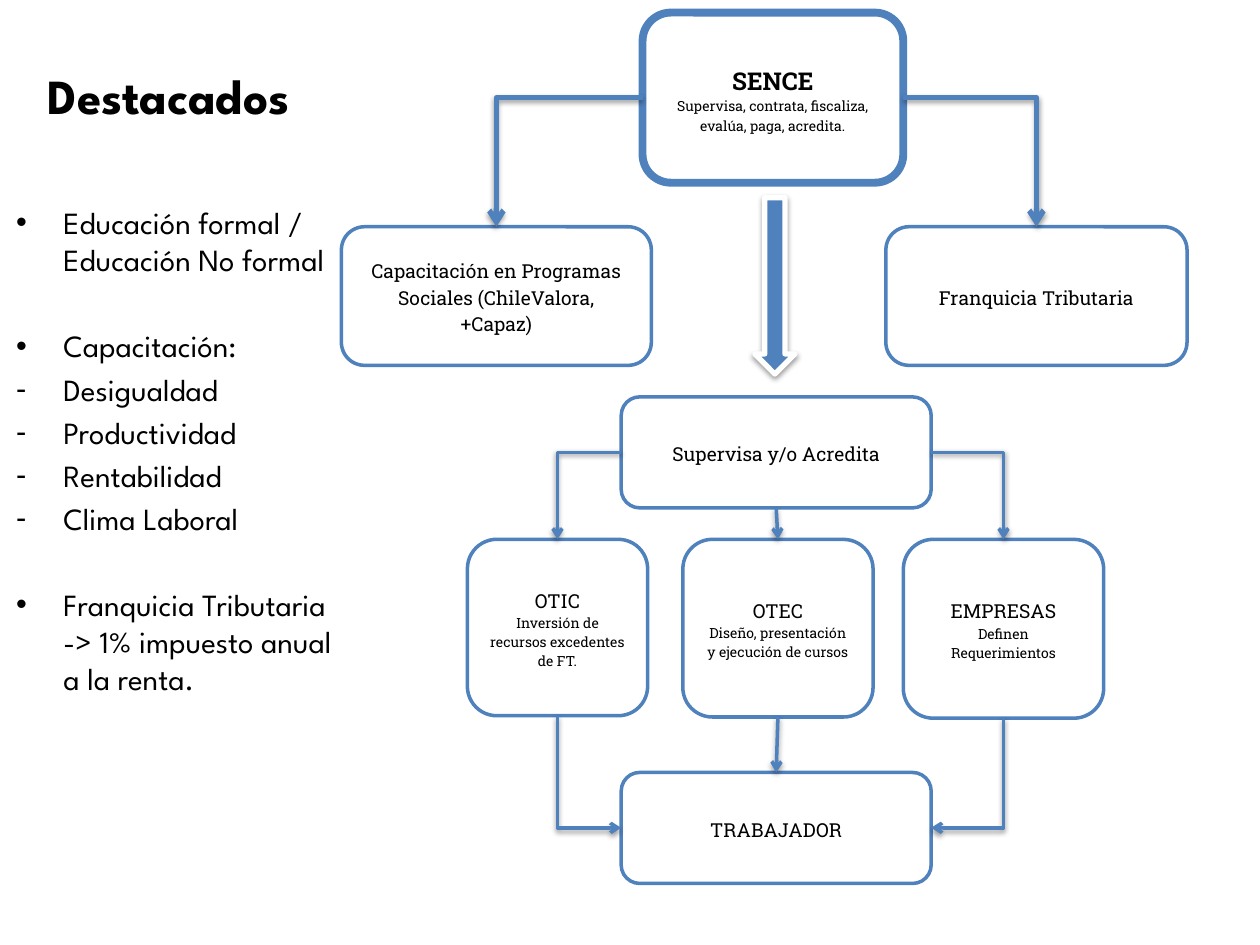
from dataclasses import dataclass

from lxml import etree
from pptx import Presentation
from pptx.dml.color import RGBColor
from pptx.enum.shapes import MSO_CONNECTOR, MSO_SHAPE
from pptx.enum.text import MSO_ANCHOR, PP_ALIGN
from pptx.oxml import parse_xml
from pptx.oxml.ns import nsdecls, qn
from pptx.util import Pt

STRAIGHT, ELBOW = MSO_CONNECTOR.STRAIGHT, MSO_CONNECTOR.ELBOW
ROUND, DOWN_ARROW = MSO_SHAPE.ROUNDED_RECTANGLE, MSO_SHAPE.DOWN_ARROW
MIDDLE, CENTER = MSO_ANCHOR.MIDDLE, PP_ALIGN.CENTER
TOP, LEFT, BOTTOM, RIGHT = range(4)


@dataclass(frozen=True)
class Theme:
    """Colours, fonts and sizes of the slide."""
    black: RGBColor = RGBColor(0, 0, 0)
    white: RGBColor = RGBColor(255, 255, 255)
    blue: RGBColor = RGBColor(0x4F, 0x81, 0xBD)
    head: str = "League Spartan"
    body: str = "Roboto Slab"
    title: float = 28
    bullet: float = 17.6
    root: float = 14
    label: float = 11
    detail: float = 8


T = Theme()

BULLETS = [
    ("•", "Educación formal / Educación No formal", 0),
    ("•", "Capacitación:", 28.2),
    ("-", "Desigualdad", 3.5),
    ("-", "Productividad", 3.5),
    ("-", "Rentabilidad", 3.5),
    ("-", "Clima Laboral", 3.5),
    ("•", "Franquicia Tributaria -> 1% impuesto anual a la renta.", 28.2),
]

NODES = {
    "sence": ((172.2, 0.2, 149, 97.2), "SENCE",
              "Supervisa, contrata, fiscaliza, evalúa, paga, acredita."),
    "programas": ((0.1, 122.6, 177.1, 79.2),
                  "Capacitación en Programas Sociales (ChileValora, +Capaz)", ""),
    "franquicia": ((311.2, 122.6, 172.1, 79.2), "Franquicia Tributaria", ""),
    "otic": ((72.1, 301.2, 103, 100.8), "OTIC",
             "Inversión de recursos excedentes de FT."),
    "otec": ((195.2, 301.2, 108.7, 101.5), "OTEC",
             "Diseño, presentación y ejecución de cursos"),
    "empresas": ((321.2, 301.2, 114.5, 102.2), "EMPRESAS",
                 "Definen Requerimientos"),
    "supervisa": ((160, 219.8, 177.1, 63.4), "Supervisa y/o Acredita", ""),
    "trabajador": ((160, 434.4, 177.1, 63.4), "TRABAJADOR", ""),
}

LINKS = [
    (ELBOW, "sence", LEFT, "programas", TOP, 3, "tailEnd"),
    (ELBOW, "sence", RIGHT, "franquicia", TOP, 3, "tailEnd"),
    (ELBOW, "supervisa", LEFT, "otic", TOP, 2, "tailEnd"),
    (ELBOW, "supervisa", RIGHT, "empresas", TOP, 2, "tailEnd"),
    (STRAIGHT, "supervisa", BOTTOM, "otec", TOP, 2, "tailEnd"),
    (ELBOW, "trabajador", LEFT, "otic", BOTTOM, 2, "headEnd"),
    (STRAIGHT, "otec", BOTTOM, "trabajador", TOP, 2, "tailEnd"),
    (ELBOW, "trabajador", RIGHT, "empresas", BOTTOM, 2, "headEnd"),
]


def apply(obj, formats):
    """Set every attribute named in a dict of format values."""
    for name, value in formats.items():
        setattr(obj, name, value)


def write(p, text, size, font, bold=False):
    """Add one formatted run to a paragraph."""
    r = p.add_run()
    r.text = text
    apply(r.font, {"name": font, "size": Pt(size), "bold": bold})
    r.font.color.rgb = T.black


def paint(sp, fill, line, width):
    """Give a shape its fill and outline, without the theme shadow."""
    sp.shadow.inherit = False
    sp.fill.solid()
    sp.fill.fore_color.rgb = fill
    sp.line.color.rgb = line
    sp.line.width = Pt(width)


def cast_shadow(sp):
    """Give a shape or connector a soft shadow below it."""
    for old in sp._element.spPr.findall(qn("a:effectLst")):
        sp._element.spPr.remove(old)
    sp._element.spPr.append(parse_xml(
        f'<a:effectLst {nsdecls("a")}><a:outerShdw blurRad="{Pt(3.1)}" '
        f'dist="{Pt(1.6)}" dir="5400000" rotWithShape="0">'
        '<a:srgbClr val="000000"><a:alpha val="38000"/></a:srgbClr>'
        '</a:outerShdw></a:effectLst>'))


def add_title(s, box):
    """Place the slide title in its box."""
    tf = s.shapes.add_textbox(*map(Pt, box)).text_frame
    apply(tf, {"word_wrap": True, "vertical_anchor": MIDDLE})
    write(tf.paragraphs[0], "Destacados", T.title, T.head, True)


def add_bullets(s, box):
    """Place the list of highlights in its box."""
    tf = s.shapes.add_textbox(*map(Pt, box)).text_frame
    apply(tf, {"word_wrap": True, "margin_top": Pt(33.7)})
    for i, (mark, text, before) in enumerate(BULLETS):
        p = tf.add_paragraph() if i else tf.paragraphs[0]
        p.space_before = Pt(before)
        pPr = p._p.get_or_add_pPr()
        pPr.set("marL", str(Pt(27)))
        pPr.set("indent", str(Pt(-27)))
        etree.SubElement(pPr, qn("a:buFont")).set("typeface", "Arial")
        etree.SubElement(pPr, qn("a:buChar")).set("char", mark)
        write(p, text, T.bullet, T.head)


def add_node(s, box, label, detail, root=False):
    """Place one rounded box with a label and an optional detail line."""
    sp = s.shapes.add_shape(ROUND, *map(Pt, box))
    paint(sp, T.white, T.blue, 4.5 if root else 2)
    tf = sp.text_frame
    apply(tf, {"word_wrap": True, "vertical_anchor": MIDDLE})
    p = tf.paragraphs[0]
    apply(p, {"alignment": CENTER, "line_spacing": 1.15,
              "space_after": Pt(0 if detail else 10)})
    write(p, label, T.root if root else T.label, T.body, root)
    if detail:
        p = tf.add_paragraph()
        apply(p, {"alignment": CENTER, "line_spacing": 1.15})
        write(p, detail, T.detail, T.body)
    return sp


def add_link(s, kind, start, start_side, end, end_side, width, arrow):
    """Join two boxes with a straight or single-bend arrow."""
    c = s.shapes.add_connector(kind, 0, 0, 0, 0)
    c.begin_connect(start, start_side)
    c.end_connect(end, end_side)
    if kind == ELBOW:
        c._element.spPr.find(qn("a:prstGeom")).set("prst", "bentConnector2")
    c.line.color.rgb = T.blue
    c.line.width = Pt(width)
    etree.SubElement(c.line._get_or_add_ln(), qn(f"a:{arrow}")).set("type", "arrow")
    cast_shadow(c)


def add_diagram(s, box):
    """Place the boxes, block arrow and links relative to the box corner."""
    x, y = box[:2]
    nodes = {}
    for key, ((dx, dy, w, h), label, detail) in NODES.items():
        nodes[key] = add_node(s, (x + dx, y + dy, w, h), label, detail,
                              key == "sence")
    sp = s.shapes.add_shape(DOWN_ARROW, Pt(x + 236.3), Pt(y + 106), Pt(23), Pt(100.8))
    paint(sp, T.blue, T.white, 3)
    cast_shadow(sp)
    for kind, start, start_side, end, end_side, width, arrow in LINKS:
        add_link(s, kind, nodes[start], start_side, nodes[end], end_side,
                 width, arrow)


def main():
    """Build the slide and save it."""
    prs = Presentation()
    apply(prs, {"slide_width": Pt(720), "slide_height": Pt(540)})
    s = prs.slides.add_slide(prs.slide_layouts[6])
    add_title(s, (20.2, 20.9, 568, 67))
    add_bullets(s, (2.2, 82.8, 204.5, 382.3))
    add_diagram(s, (195, 7, 483.3, 497.8))
    prs.save("out.pptx")


if __name__ == "__main__":
    main()
